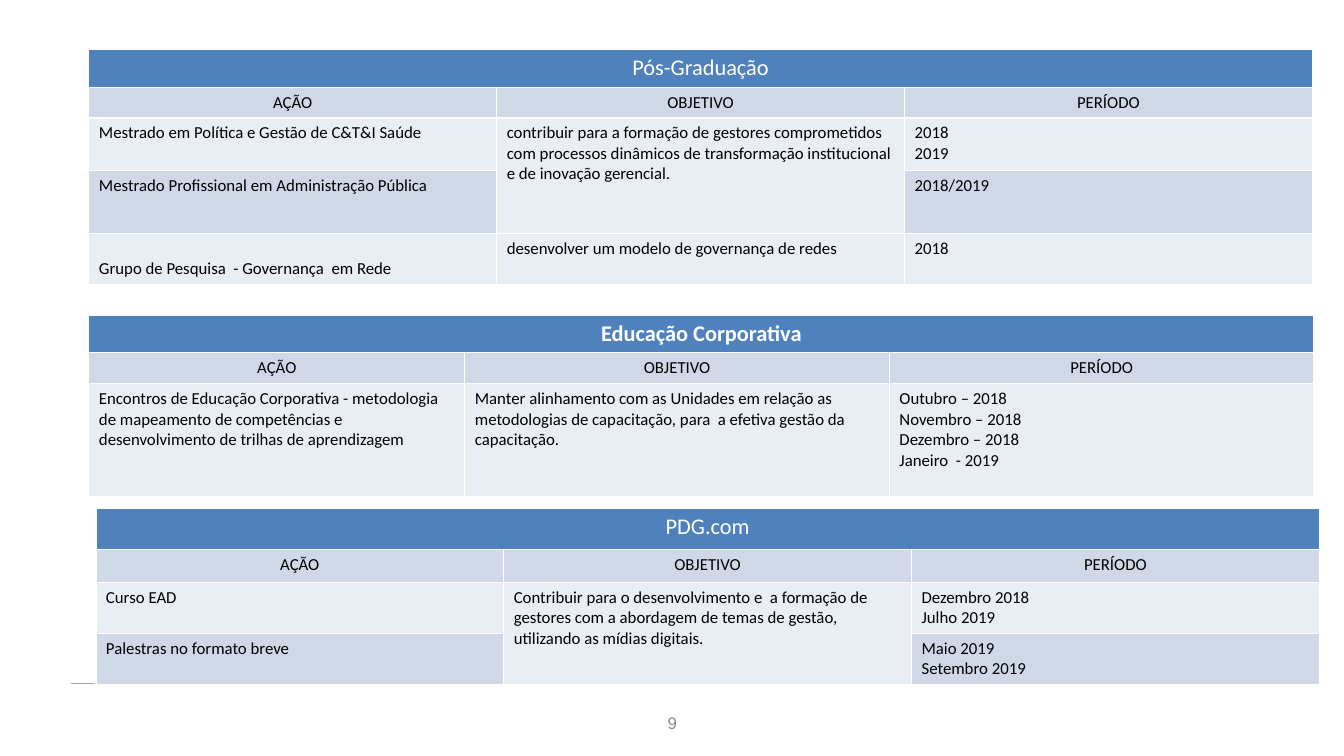
from pptx import Presentation
from pptx.dml.color import RGBColor
from pptx.enum.shapes import MSO_CONNECTOR
from pptx.enum.text import MSO_ANCHOR, PP_ALIGN
from pptx.oxml.ns import qn
from pptx.util import Pt
from lxml import etree

STRAIGHT = MSO_CONNECTOR.STRAIGHT
TOP, MIDDLE, BOTTOM = MSO_ANCHOR.TOP, MSO_ANCHOR.MIDDLE, MSO_ANCHOR.BOTTOM
LEFT, CENTER = PP_ALIGN.LEFT, PP_ALIGN.CENTER

WHITE = RGBColor(0xFF, 0xFF, 0xFF)
BLACK = RGBColor(0x00, 0x00, 0x00)
BLUE = RGBColor(0x4F, 0x81, 0xBD)
DARK_BAND = RGBColor(0xD0, 0xD8, 0xE8)
LIGHT_BAND = RGBColor(0xE9, 0xED, 0xF4)
RULE_GREY = RGBColor(0xA6, 0xA6, 0xA6)
NUMBER_GREY = RGBColor(0x8C, 0x8C, 0x8C)

HEADINGS = ["AÇÃO", "OBJETIVO", "PERÍODO"]
PROGRAMS = [
    {
        "title": "Pós-Graduação", "bold": False, "left": 63.5, "top": 35.3,
        "columns": [291.3, 291.3, 291.3], "heights": [27, 22, 37.5, 45, 36.5],
        "shared_goal": True,
        "rows": [
            ["Mestrado em Política e Gestão de C&T&I Saúde",
             "contribuir para a formação de gestores comprometidos com processos "
             "dinâmicos de transformação institucional e de inovação gerencial.",
             "2018\n2019"],
            ["Mestrado Profissional em Administração Pública", None, "2018/2019"],
            ["Grupo de Pesquisa  - Governança  em Rede",
             "desenvolver um modelo de governança de redes", "2018"],
        ],
    },
    {
        "title": "Educação Corporativa", "bold": True, "left": 63.5, "top": 225,
        "columns": [268.5, 303.3, 303.3], "heights": [27, 22, 80.5],
        "shared_goal": False,
        "rows": [
            ["Encontros de Educação Corporativa - metodologia de mapeamento de "
             "competências e desenvolvimento de trilhas de aprendizagem",
             "Manter alinhamento com as Unidades em relação as metodologias de "
             "capacitação, para  a efetiva gestão da capacitação.",
             "Outubro – 2018\nNovembro – 2018\nDezembro – 2018\nJaneiro  - 2019"],
        ],
    },
    {
        "title": "PDG.com", "bold": False, "left": 68.5, "top": 362.8,
        "columns": [291.3, 291.3, 291.3], "heights": [29.5, 23.5, 36.5, 36.5],
        "shared_goal": True,
        "rows": [
            ["Curso EAD",
             "Contribuir para o desenvolvimento e  a formação de gestores com a "
             "abordagem de temas de gestão, utilizando as mídias digitais.",
             "Dezembro 2018\nJulho 2019"],
            ["Palestras no formato breve", None, "Maio 2019\nSetembro 2019"],
        ],
    },
]


def write(frame, text, size, color, align, bold=False, font="Calibri"):
    frame.text = text
    for paragraph in frame.paragraphs:
        paragraph.alignment = align
        paragraph.font.name = font
        paragraph.font.size = Pt(size)
        paragraph.font.bold = bold
        paragraph.font.color.rgb = color


def fill_cell(cell, text, fill, size=12, color=BLACK, align=LEFT, bold=False):
    cell.fill.solid()
    cell.fill.fore_color.rgb = fill
    if text is not None:
        write(cell.text_frame, text, size, color, align, bold)


deck = Presentation()
deck.slide_width = Pt(960)
deck.slide_height = Pt(540)
page = deck.slides.add_slide(deck.slide_layouts[6])

footer_rule = page.shapes.add_connector(STRAIGHT, Pt(50.4), Pt(488.2), Pt(913), Pt(488.2))
footer_rule.line.color.rgb = RULE_GREY
footer_rule.line.width = Pt(0.25)
etree.SubElement(footer_rule.element.spPr, qn("a:effectLst"))

number_box = page.shapes.add_textbox(Pt(422.6), Pt(501.8), Pt(115.2), Pt(28.8))
number_box.text_frame.word_wrap = True
number_box.text_frame.vertical_anchor = MIDDLE
write(number_box.text_frame, "9", 12, NUMBER_GREY, CENTER, font="Arial")

for program in PROGRAMS:
    columns, heights = program["columns"], program["heights"]
    table = page.shapes.add_table(
        len(heights), len(columns), Pt(program["left"]), Pt(program["top"]),
        Pt(sum(columns)), Pt(sum(heights))).table
    for column, width in zip(table.columns, columns):
        column.width = Pt(width)
    for row, height in zip(table.rows, heights):
        row.height = Pt(height)

    table.cell(0, 0).merge(table.cell(0, 2))
    fill_cell(table.cell(0, 0), program["title"], BLUE, 16, WHITE, CENTER, program["bold"])
    for index, heading in enumerate(HEADINGS):
        fill_cell(table.cell(1, index), heading, DARK_BAND, align=CENTER)

    if program["shared_goal"]:
        table.cell(2, 1).merge(table.cell(3, 1))
    for row_index, texts in enumerate(program["rows"], start=2):
        band = DARK_BAND if row_index % 2 else LIGHT_BAND
        for index, text in enumerate(texts):
            cell = table.cell(row_index, index)
            fill_cell(cell, text, band)
            research_group = text is not None and text.startswith("Grupo de Pesquisa")
            cell.vertical_anchor = BOTTOM if research_group else TOP

deck.save("out.pptx")
